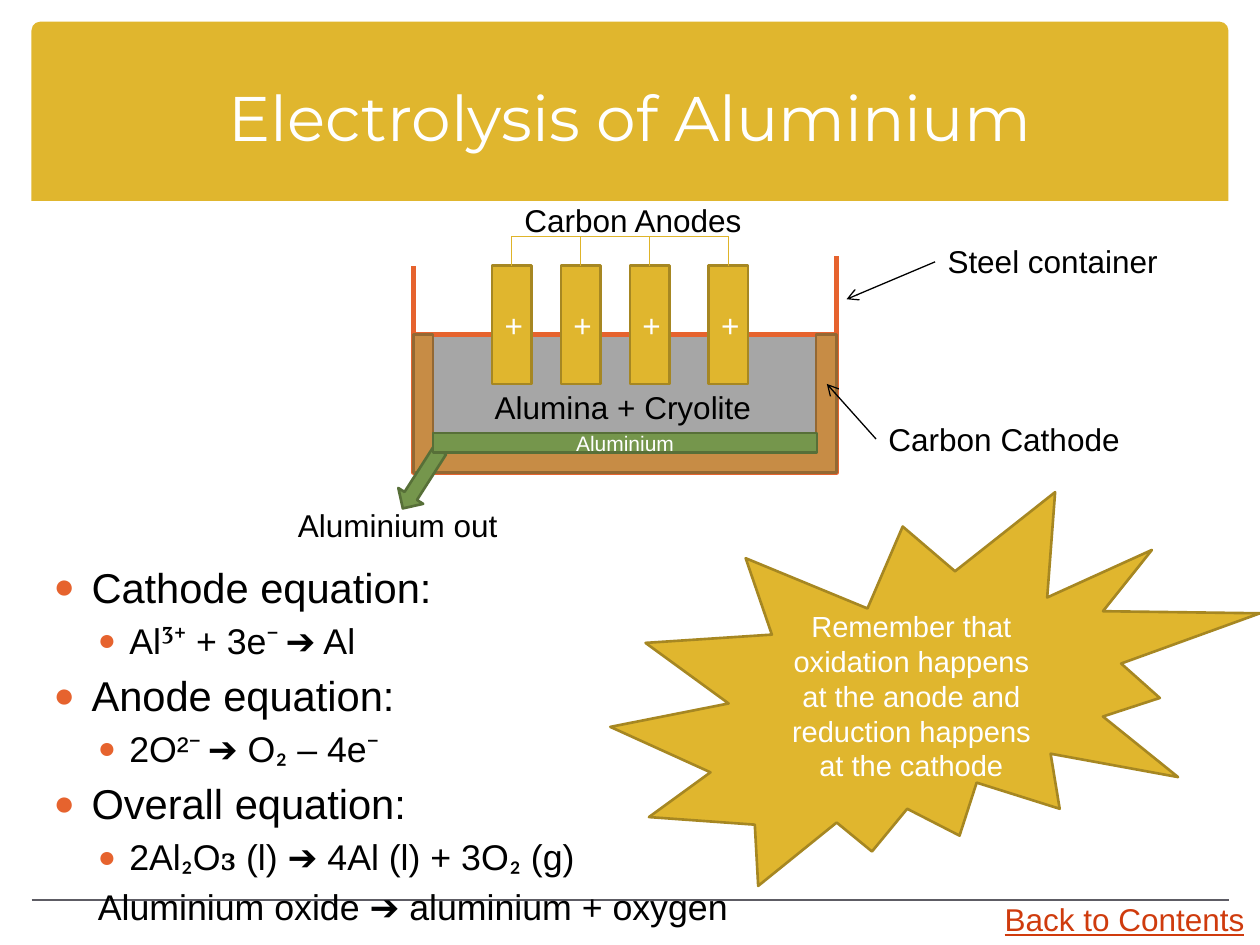
from lxml import etree
from pptx import Presentation
from pptx.dml.color import RGBColor
from pptx.enum.shapes import MSO_CONNECTOR, MSO_SHAPE
from pptx.enum.text import MSO_ANCHOR, PP_ALIGN
from pptx.oxml.ns import qn
from pptx.util import Inches, Pt

RECTANGLE = MSO_SHAPE.RECTANGLE
BANNER = MSO_SHAPE.ROUND_2_SAME_RECTANGLE
CORNER = MSO_SHAPE.CORNER
ARROW = MSO_SHAPE.RIGHT_ARROW
BURST = MSO_SHAPE.EXPLOSION2
STRAIGHT = MSO_CONNECTOR.STRAIGHT
CENTER, LEFT = PP_ALIGN.CENTER, PP_ALIGN.LEFT
MIDDLE, TOP = MSO_ANCHOR.MIDDLE, MSO_ANCHOR.TOP

COLORS = {
    "gold": "E0B62E", "gold_edge": "A68722", "wire": "DFB429",
    "orange": "E6632E", "link": "CF3B0D", "rule": "5D5C64",
    "electrolyte": "A6A6A6", "carbon": "C78C45", "carbon_edge": "936833",
    "green": "75964C", "green_edge": "576F38",
    "white": "FFFFFF", "black": "000000",
}
CELL = 10 / 64
BODY_FONT = "Arial"
LABEL_HEIGHT = 2.6

HEADING, EQUATION = 23.8, 20.4
EQUATIONS = [
    (0, True, [("Cathode equation:", BODY_FONT)]),
    (1, True, [("Al", BODY_FONT), ("³⁺", "Vollkorn"), (" + 3e", BODY_FONT),
               ("⁻ ", "Vollkorn"), ("➔ Al", BODY_FONT)]),
    (0, True, [("Anode equation:", BODY_FONT)]),
    (1, True, [("2O²", BODY_FONT), ("⁻ ", "Vollkorn"), ("➔ O", BODY_FONT),
               ("₂", "Calibri"), (" – 4e", BODY_FONT), ("⁻", "Vollkorn")]),
    (0, True, [("Overall equation:", BODY_FONT)]),
    (1, True, [("2Al", BODY_FONT), ("₂", "Calibri"), ("O", BODY_FONT),
               ("з", "Vollkorn"), (" (l) ➔ 4Al (l) + 3O", BODY_FONT),
               ("₂", "Calibri"), (" (g)", BODY_FONT)]),
    (1, False, [("Aluminium oxide ➔ aluminium + oxygen", BODY_FONT)]),
]


def grid(*cells):
    return [Inches(cell * CELL) for cell in cells]


def color(name):
    return RGBColor.from_string(COLORS[name])


def add_run(paragraph, text, size, tint, font=BODY_FONT):
    run = paragraph.add_run()
    run.text = text
    run.font.size = Pt(size)
    run.font.name = font
    run.font.color.rgb = color(tint)
    return run


def add_shape(slide, kind, box, fill, edge=None, width=1.5, adjustments=(), rotation=0):
    shape = slide.shapes.add_shape(kind, *grid(*box))
    shape.shadow.inherit = False
    shape.fill.solid()
    shape.fill.fore_color.rgb = color(fill)
    if edge:
        shape.line.color.rgb = color(edge)
        shape.line.width = Pt(width)
    else:
        shape.line.fill.background()
    for index, value in enumerate(adjustments):
        shape.adjustments[index] = value
    shape.rotation = rotation
    return shape


def write_centered(shape, text, size):
    frame = shape.text_frame
    frame.word_wrap = True
    frame.vertical_anchor = MIDDLE
    frame.paragraphs[0].alignment = CENTER
    add_run(frame.paragraphs[0], text, size, "white")


def add_line(slide, start, end, tint, width, arrow=False):
    connector = slide.shapes.add_connector(STRAIGHT, *grid(*start, *end))
    connector.line.color.rgb = color(tint)
    connector.line.width = Pt(width)
    if arrow:
        line = connector.line._get_or_add_ln()
        etree.SubElement(line, qn("a:tailEnd"), type="arrow")
    etree.SubElement(connector._element.spPr, qn("a:effectLst"))


def add_text(slide, box, text, size=18, tint="black", font=BODY_FONT,
             wrap=False, alignment=LEFT, anchor=TOP):
    frame = slide.shapes.add_textbox(*grid(*box)).text_frame
    frame.word_wrap = wrap
    frame.vertical_anchor = anchor
    frame.paragraphs[0].alignment = alignment
    return add_run(frame.paragraphs[0], text, size, tint, font)


def add_header(slide, left, top, width, height):
    add_shape(slide, BANNER, (left, top, width, height), "gold", adjustments=(0.05, 0))
    add_text(slide, (left + 0.5, top + 0.8, width - 1, height - 1.1),
             "Electrolysis of Aluminium", 36, "white", "Montserrat", True, CENTER, MIDDLE)


def add_footer(slide, left, top, width):
    add_line(slide, (left, top), (left + width, top), "rule", 1)
    link = add_text(slide, (left + 48.8, top - 0.3, 13.6, LABEL_HEIGHT),
                    "Back to Contents", tint="link")
    link.font.underline = True


def add_equations(slide, left, top, width, height):
    frame = slide.shapes.add_textbox(*grid(left, top, width, height)).text_frame
    frame.word_wrap = True
    for index, (level, bulleted, runs) in enumerate(EQUATIONS):
        paragraph = frame.add_paragraph() if index else frame.paragraphs[0]
        size = EQUATION if level else HEADING
        paragraph.level = level
        paragraph.space_before = Pt(round(size * 0.2, 1))
        properties = paragraph._p.get_or_add_pPr()
        properties.set("marL", str(Inches(0.6 if level else 0.3)))
        properties.set("indent", str(Inches(-0.25 if level else -0.3)))
        if bulleted:
            tint = etree.SubElement(properties, qn("a:buClr"))
            etree.SubElement(tint, qn("a:srgbClr"), val=COLORS["orange"])
            etree.SubElement(properties, qn("a:buSzPct"), val="85000")
            etree.SubElement(properties, qn("a:buFont"), typeface=BODY_FONT)
            etree.SubElement(properties, qn("a:buChar"), char="●")
        else:
            etree.SubElement(properties, qn("a:buNone"))
        for text, font in runs:
            add_run(paragraph, text, size, "black", font)


def add_anodes(slide, left, top):
    offsets = (0, 3.5, 7, 11)
    for offset in offsets:
        column = left + offset
        anode = add_shape(slide, RECTANGLE, (column, top, 2, 6), "gold", "gold_edge")
        write_centered(anode, "+", 18)
        add_line(slide, (column + 1, top), (column + 1, top - 1.5), "wire", 0.75)
    add_line(slide, (left + 1, top - 1.5), (left + offsets[-1] + 1, top - 1.5), "wire", 0.75)


def add_cell(slide, left, top, width, height):
    right = left + width
    add_shape(slide, RECTANGLE, (left, top, width, height), "electrolyte", "orange", 3)
    add_line(slide, (right, top + 3.5), (right, top - 4), "orange", 3)
    add_line(slide, (left, top + 3.5), (left, top - 3.5), "orange", 3)
    add_anodes(slide, left + 4, top - 3.5)

    lining = width - 0.5
    add_shape(slide, CORNER, (right - (lining + height) / 2, top + (height - lining) / 2,
                              height, lining),
              "carbon", "carbon_edge", adjustments=(0.15, 0.15), rotation=270)
    add_shape(slide, RECTANGLE, (left, top, 1, height), "carbon", "carbon_edge")
    add_shape(slide, ARROW, (left - 1.35, top + 6.6, 3.5, 1.5),
              "green", "green_edge", rotation=122.6)
    metal = add_shape(slide, RECTANGLE, (left + 1, top + 5, width - 2, 1),
                      "green", "green_edge")
    write_centered(metal, "Aluminium", 12)

    labels = [
        ("Carbon Anodes", 5, -7.1, 12.4),
        ("Alumina + Cryolite", 3.5, 2.4, 14.9),
        ("Aluminium out", -6.5, 8.4, 11.5),
        ("Carbon Cathode", 23.5, 4, 13.1),
        ("Steel container", 26.5, -5, 12.1),
    ]
    for text, column, row, span in labels:
        add_text(slide, (left + column, top + row, span, LABEL_HEIGHT), text)
    add_line(slide, (right + 2, top + 5.3), (right - 0.5, top + 2.5), "black", 0.75, True)
    add_line(slide, (right + 5, top - 3.7), (right + 0.5, top - 1.8), "black", 0.75, True)


def add_reminder(slide, left, top, width, height):
    burst = add_shape(slide, BURST, (left, top, width, height), "gold", "gold_edge")
    write_centered(burst, "Remember that oxidation happens at the anode and "
                          "reduction happens at the cathode", 16.6)


def main():
    presentation = Presentation()
    presentation.slide_width, presentation.slide_height = grid(64, 48)
    slide = presentation.slides.add_slide(presentation.slide_layouts[6])
    add_header(slide, 1.6, 1.1, 60.8, 9.1)
    add_footer(slide, 1.6, 45.7, 60.8)
    add_equations(slide, 2.1, 28.2, 59.7, 17.3)
    add_cell(slide, 21, 17, 21.5, 7)
    add_reminder(slide, 31, 25, 33, 20)
    presentation.save("out.pptx")


if __name__ == "__main__":
    main()
